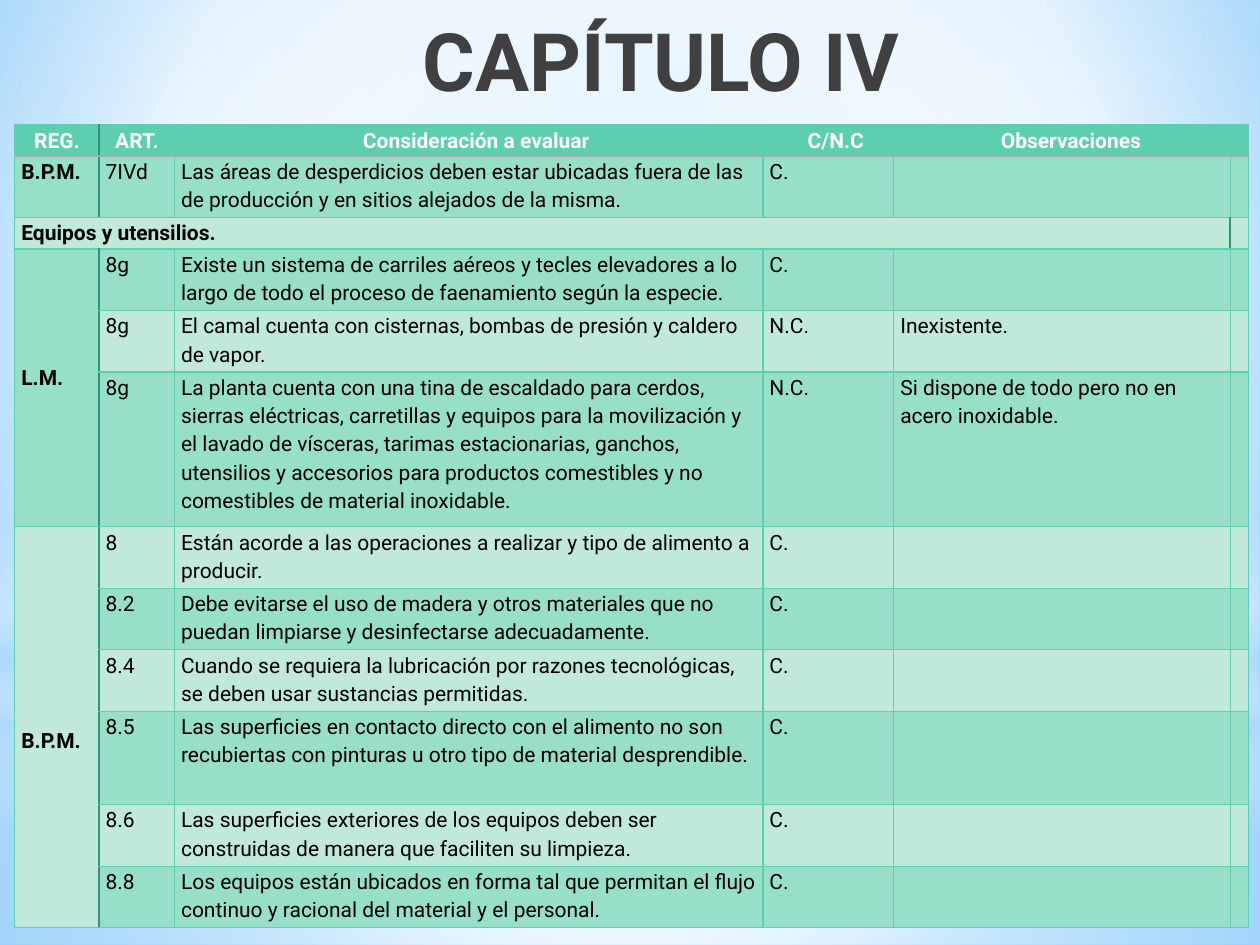
"""Build the chapter IV checklist slide with its table of requirements."""
import pptx
import pptx.dml.color
import pptx.enum.shapes
import pptx.enum.text
import pptx.oxml.ns
import pptx.util
from lxml import etree

Cm = pptx.util.Cm
Pt = pptx.util.Pt
ALIGN = pptx.enum.text.PP_ALIGN
ANCHOR = pptx.enum.text.MSO_ANCHOR
SHAPE = pptx.enum.shapes.MSO_SHAPE

FONT = "Roboto"
GREEN, DARK_GREEN, GREY = "5DCEAF", "31957A", "A9A9A9"
BAND, PALE = "98DFC9", "C0E9DA"
CENTRE = (50, 50, 50, 50)

BACKDROP = [(0, "9ED5FF", 100), (60, "FFFFFF", 100), (100, "5BB9FF", 100)]
GLOWS = [
    (SHAPE.RECTANGLE, (0, 14.17, 25.4, 4.88), CENTRE,
     [(0, "FFFFFF", 91), (37, "FFFFFF", 76), (100, "B4DCFA", 79)]),
    (SHAPE.RECTANGLE, (0, 0, 25.4, 14.17), CENTRE,
     [(0, "FFFFFF", 89), (48, "FFFFFF", 62), (100, "B4DCFA", 79)]),
    (SHAPE.RECTANGLE, (0, 10.46, 25.4, 6.35), None,
     [(0, "FFFFFF", 0), (29, "FFFFFF", 30), (45, "B4DCFA", 40),
      (55, "FFFFFF", 26), (65, "B4DCFA", 60), (100, "FFFFFF", 0)]),
    (SHAPE.OVAL, (0, 4.45, 25.4, 14.17), CENTRE,
     [(0, "FFFFFF", 100), (56, "FFFFFF", 0)]),
]

COLUMNS = [1.7, 1.52, 11.86, 0.3, 2.34, 6.78, 0.3]
HEADER_ROW, SECTION_ROW = 0, 2
SHORT, NORMAL = 0.63, 1.24
ROWS = [
    (SHORT, "REG.", "ART.", "Consideración a evaluar", "C/N.C", "Observaciones"),
    (NORMAL, "B.P.M.", "7IVd", "Las áreas de desperdicios deben estar ubicadas fuera de las "
     "de producción y en sitios alejados de la misma.", "C.", ""),
    (SHORT, "Equipos y utensilios.", "", "", "", ""),
    (NORMAL, "L.M.", "8g", "Existe un sistema de carriles aéreos y tecles elevadores a lo "
     "largo de todo el proceso de faenamiento según la especie.", "C.", ""),
    (NORMAL, "", "8g", "El camal cuenta con cisternas, bombas de presión y caldero "
     "de vapor.", "N.C.", "Inexistente."),
    (3.12, "", "8g", "La planta cuenta con una tina de escaldado para cerdos, sierras "
     "eléctricas, carretillas y equipos para la movilización y el lavado de vísceras, "
     "tarimas estacionarias, ganchos, utensilios y accesorios para productos comestibles "
     "y no comestibles de material inoxidable.", "N.C.",
     "Si dispone de todo pero no en acero inoxidable."),
    (NORMAL, "B.P.M.", "8", "Están acorde a las operaciones a realizar y tipo de alimento a "
     "producir.", "C.", ""),
    (NORMAL, "", "8.2", "Debe evitarse el uso de madera y otros materiales que no "
     "puedan limpiarse y desinfectarse adecuadamente.", "C.", ""),
    (NORMAL, "", "8.4", "Cuando se requiera la lubricación por razones tecnológicas, "
     "se deben usar sustancias permitidas.", "C.", ""),
    (1.88, "", "8.5", "Las superficies en contacto directo con el alimento no son "
     "recubiertas con pinturas u otro tipo de material desprendible.", "C.", ""),
    (NORMAL, "", "8.6", "Las superficies exteriores de los equipos deben ser "
     "construidas de manera que faciliten su limpieza.", "C.", ""),
    (NORMAL, "", "8.8", "Los equipos están ubicados en forma tal que permitan el flujo "
     "continuo y racional del material y el personal.", "C.", ""),
]
MERGES = [(2, 0, 2, 5), (3, 0, 5, 0), (6, 0, 11, 0), (0, 2, 0, 3), (0, 5, 0, 6)]
MERGES += [(row, 3, row, 4) for row in range(1, len(ROWS)) if row != SECTION_ROW]
LABEL_OFFSETS = {3: 2.28, 6: 4}


def colour(value):
    return pptx.dml.color.RGBColor.from_string(value)


def child(parent, tag, **attributes):
    element = etree.SubElement(parent, pptx.oxml.ns.qn(tag))
    for name, value in attributes.items():
        element.set(name, str(value))
    return element


def set_gradient(owner, fill, stops, focus):
    fill.gradient()
    gradient = owner.find(".//" + pptx.oxml.ns.qn("a:gradFill"))
    for element in list(gradient):
        gradient.remove(element)
    stop_list = child(gradient, "a:gsLst")
    for position, value, opacity in stops:
        stop = child(stop_list, "a:gs", pos=position * 1000)
        child(child(stop, "a:srgbClr", val=value), "a:alpha", val=opacity * 1000)
    if focus:
        sides = {side: part * 1000 for side, part in zip("ltrb", focus)}
        child(child(gradient, "a:path", path="circle"), "a:fillToRect", **sides)
    else:
        child(gradient, "a:lin", ang=90 * 60000, scaled=0)


def write(para, text, size, value, bold):
    span = para.add_run()
    span.text = text
    span.font.name = FONT
    span.font.size = Pt(size)
    span.font.bold = bold
    span.font.color.rgb = colour(value)


def set_borders(cell, row, column):
    edges = {side: (GREEN, 0.75) for side in "LRTB"}
    if column == 0 and row != HEADER_ROW:
        edges["R"] = (DARK_GREEN, 1.25)
    if column == 1 or (row == SECTION_ROW and column == 6):
        edges["L"] = (DARK_GREEN, 1.25)
    if row == HEADER_ROW:
        edges["B"] = (GREY, 1.25)
    if row == HEADER_ROW + 1:
        edges["T"] = (GREY, 1.25)
    properties = cell._tc.get_or_add_tcPr()
    for side, (value, width) in edges.items():
        line = child(properties, "a:ln" + side, w=Pt(width))
        child(child(line, "a:solidFill"), "a:srgbClr", val=value)


def format_cell(cell, row, column, text):
    header = row == HEADER_ROW
    set_borders(cell, row, column)
    cell.fill.solid()
    cell.fill.fore_color.rgb = colour(GREEN if header else BAND if row % 2 else PALE)
    cell.margin_left = cell.margin_right = Cm(0.13)
    cell.margin_bottom = 0
    cell.margin_top = Cm(LABEL_OFFSETS.get(row, 0) if column == 0 else 0)
    para = cell.text_frame.paragraphs[0]
    para.line_spacing = 1.15
    para.alignment = ALIGN.CENTER if header else ALIGN.LEFT
    if text:
        write(para, text, 12, "FFFFFF" if header else "000000", header or column == 0)
    else:
        child(para._p, "a:endParaRPr", sz=1200)


def add_checklist(page):
    heights = [row[0] for row in ROWS]
    table = page.shapes.add_table(len(ROWS), len(COLUMNS), Cm(0.3), Cm(2.52),
                                  Cm(sum(COLUMNS)), Cm(sum(heights))).table
    for column, width in zip(table.columns, COLUMNS):
        column.width = Cm(width)
    for line, height in zip(table.rows, heights):
        line.height = Cm(height)
    for top, left, bottom, right in MERGES:
        table.cell(top, left).merge(table.cell(bottom, right))
    for row, (_, label, article, question, result, remark) in enumerate(ROWS):
        texts = [label, article, question, result, "", remark, ""]
        if row == HEADER_ROW:
            texts[3:5] = "", result
        for column, text in enumerate(texts):
            format_cell(table.cell(row, column), row, column, text)


def main():
    deck = pptx.Presentation()
    deck.slide_width, deck.slide_height = Cm(25.4), Cm(19.05)
    page = deck.slides.add_slide(deck.slide_layouts[5])
    set_gradient(page._element, page.background.fill, BACKDROP, (20, 10, 20, 60))
    for kind, place, focus, stops in GLOWS:
        glow = page.shapes.add_shape(kind, *map(Cm, place))
        glow.shadow.inherit = False
        glow.line.fill.background()
        set_gradient(glow._element, glow.fill, stops, focus)

    title = page.shapes.title
    page.shapes._spTree.append(title._element)
    title.left, title.top, title.width, title.height = map(Cm, (4.29, -0.05, 18.08, 3.18))
    frame = title.text_frame
    frame.vertical_anchor = ANCHOR.TOP
    frame.margin_top = Cm(0.27)
    frame.paragraphs[0].alignment = ALIGN.CENTER
    write(frame.paragraphs[0], "CAPÍTULO IV", 46, "404040", True)

    add_checklist(page)
    deck.save("out.pptx")


if __name__ == "__main__":
    main()
